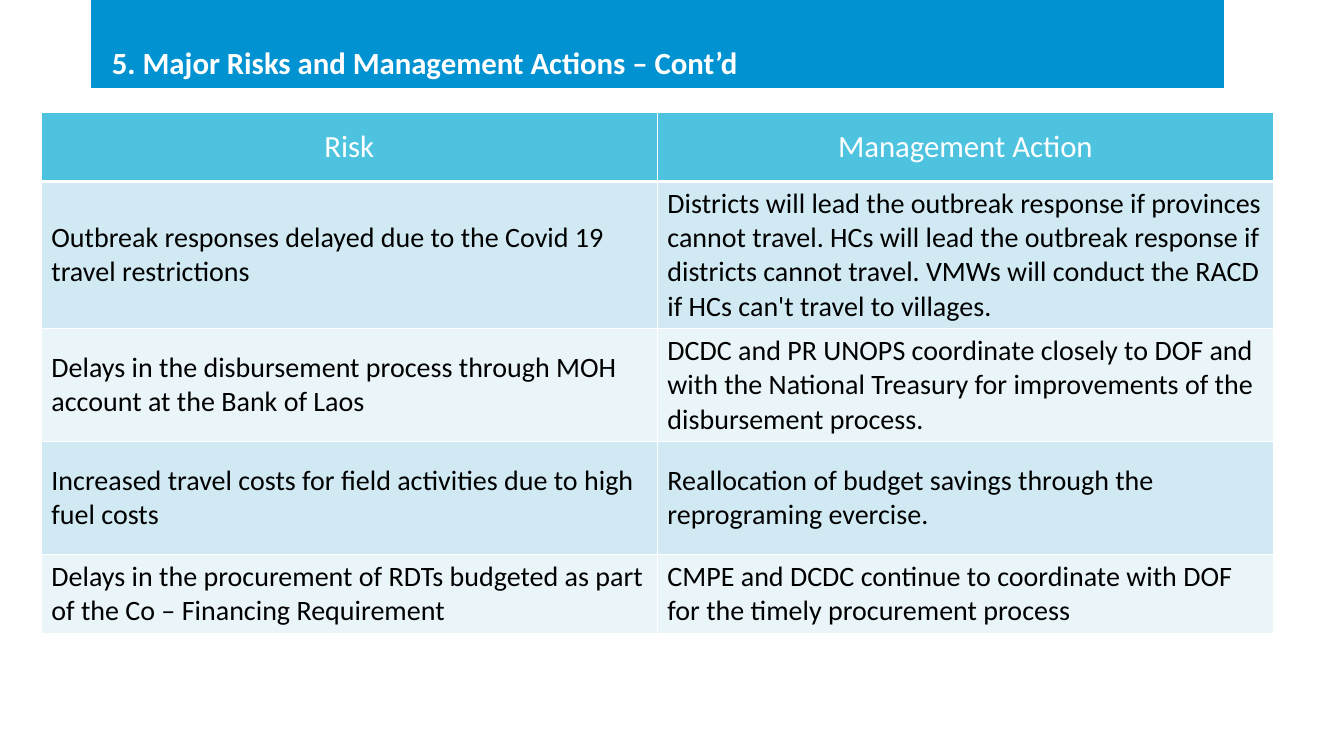
"""Build the slide of major risks and their management actions."""
import lxml.etree
import pptx
import pptx.dml.color
import pptx.enum.text
import pptx.oxml.ns
import pptx.util
from dataclasses import dataclass

Inches = pptx.util.Inches
ALIGN = pptx.enum.text.PP_ALIGN
MIDDLE = pptx.enum.text.MSO_ANCHOR.MIDDLE

TITLE = "5. Major Risks and Management Actions – Cont’d"
HEADINGS = ("Risk", "Management Action")
RISKS = [
    ("Outbreak responses delayed due to the Covid 19 travel restrictions",
     "Districts will lead the outbreak response if provinces cannot travel. "
     "HCs will lead the outbreak response if districts cannot travel. "
     "VMWs will conduct the RACD if HCs can't travel to villages."),
    ("Delays in the disbursement process through MOH account at the Bank of Laos",
     "DCDC and PR UNOPS coordinate closely to DOF and with the National Treasury "
     "for improvements of the disbursement process."),
    ("Increased travel costs for field activities due to high fuel costs",
     "Reallocation of budget savings through the reprograming evercise."),
    ("Delays in the procurement of RDTs budgeted as part of the Co – Financing Requirement",
     "CMPE and DCDC continue to coordinate with DOF for the timely procurement process"),
]
ROW_HEIGHTS = (0.68, 1.46, 1.12, 1.12, 0.78)
COLUMN_WIDTH = 6.11


@dataclass(frozen=True)
class Theme:
    font: str = "Calibri"
    heading_size: int = 22
    body_size: int = 20
    white: str = "FFFFFF"
    black: str = "000000"
    banner: str = "0092D1"
    header: str = "4EC3E0"
    bands: tuple = ("D0E9F3", "E9F5F9")
    border: float = 1
    header_border: float = 3


THEME = Theme()


def rgb(value):
    return pptx.dml.color.RGBColor.from_string(value)


def write(frame, text, *, size, color, bold=False, align=ALIGN.LEFT, spacing=None):
    frame.word_wrap = True
    paragraph = frame.paragraphs[0]
    paragraph.alignment = align
    paragraph.line_spacing = spacing
    run = paragraph.add_run()
    run.text = text
    run.font.name = THEME.font
    run.font.size = pptx.util.Pt(size)
    run.font.bold = bold
    run.font.color.rgb = rgb(color)


def set_borders(cell, top, bottom):
    properties = cell._tc.get_or_add_tcPr()
    widths = {"L": THEME.border, "R": THEME.border, "T": top, "B": bottom}
    for side, width in widths.items():
        line = lxml.etree.SubElement(properties, pptx.oxml.ns.qn(f"a:ln{side}"),
                                     w=str(pptx.util.Pt(width)))
        fill = lxml.etree.SubElement(line, pptx.oxml.ns.qn("a:solidFill"))
        lxml.etree.SubElement(fill, pptx.oxml.ns.qn("a:srgbClr"), val=THEME.white)


def add_title(slide):
    title = slide.shapes.title
    title.left, title.top = Inches(0.91), Inches(0)
    title.width, title.height = Inches(11.23), Inches(0.87)
    title.fill.solid()
    title.fill.fore_color.rgb = rgb(THEME.banner)
    title.line.color.rgb = rgb(THEME.banner)
    title.line.width = pptx.util.Pt(0.75)
    frame = title.text_frame
    frame.auto_size = pptx.enum.text.MSO_AUTO_SIZE.NONE
    frame.vertical_anchor = MIDDLE
    frame.margin_left = Inches(0.2)
    frame.margin_top = frame.margin_right = frame.margin_bottom = 0
    write(frame, TITLE, size=THEME.heading_size, color=THEME.white, bold=True, spacing=2.0)


def add_risk_table(slide):
    rows = [HEADINGS, *RISKS]
    table = slide.shapes.add_table(
        len(rows), len(HEADINGS), Inches(0.41), Inches(1.12),
        Inches(COLUMN_WIDTH * len(HEADINGS)), Inches(sum(ROW_HEIGHTS))).table
    for column in table.columns:
        column.width = Inches(COLUMN_WIDTH)
    for index, (texts, height) in enumerate(zip(rows, ROW_HEIGHTS)):
        table.rows[index].height = Inches(height)
        is_header = index == 0
        top = THEME.header_border if index == 1 else THEME.border
        bottom = THEME.header_border if is_header else THEME.border
        fill = THEME.header if is_header else THEME.bands[(index - 1) % 2]
        for cell, text in zip(table.rows[index].cells, texts):
            set_borders(cell, top, bottom)
            cell.fill.solid()
            cell.fill.fore_color.rgb = rgb(fill)
            cell.vertical_anchor = MIDDLE
            write(cell.text_frame, text,
                  size=THEME.heading_size if is_header else THEME.body_size,
                  color=THEME.white if is_header else THEME.black,
                  align=ALIGN.CENTER if is_header else ALIGN.LEFT)


def main():
    presentation = pptx.Presentation()
    presentation.slide_width = Inches(13.33)
    presentation.slide_height = Inches(7.5)
    slide = presentation.slides.add_slide(presentation.slide_layouts.get_by_name("Title Only"))
    add_risk_table(slide)
    add_title(slide)
    presentation.save("out.pptx")


if __name__ == "__main__":
    main()
